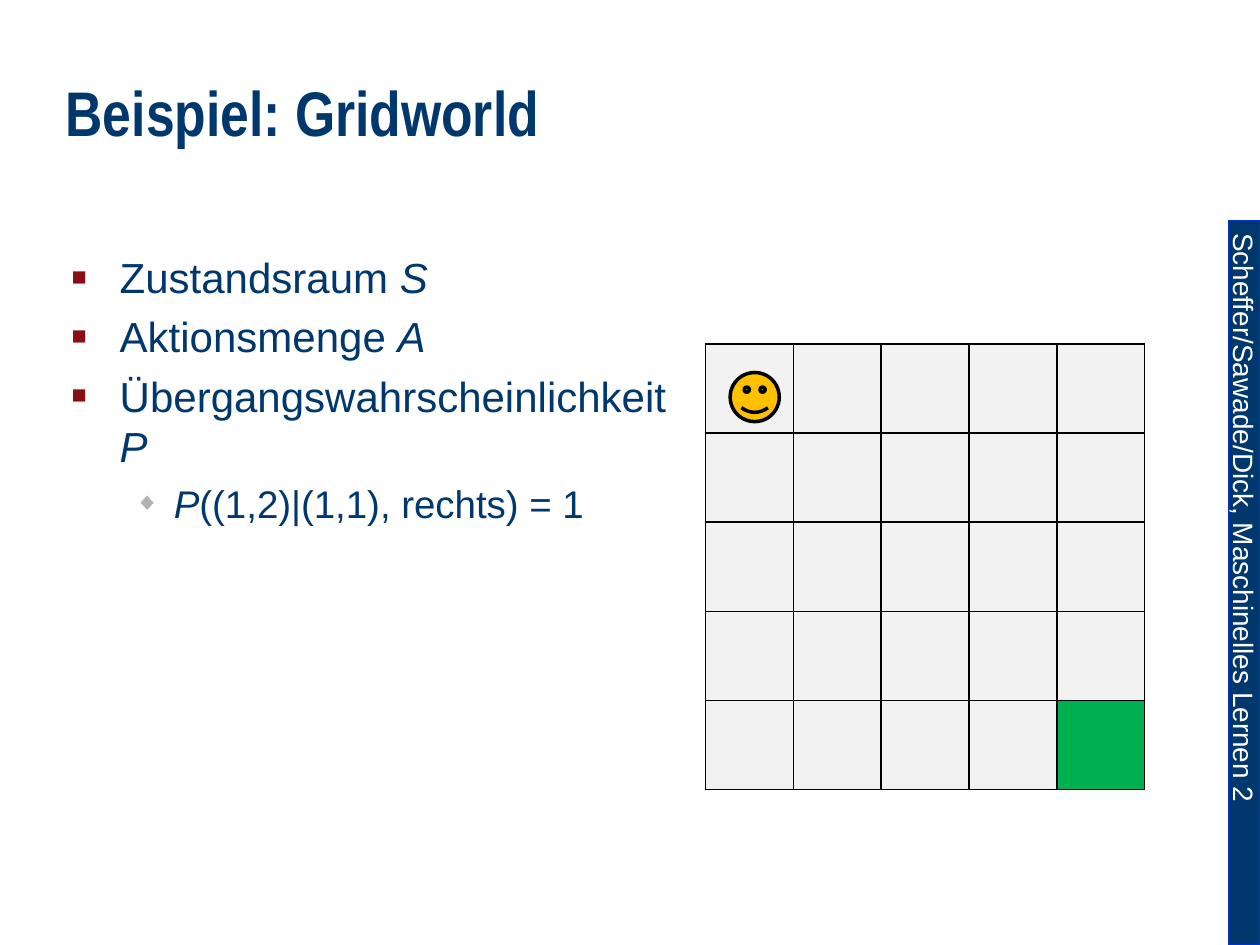
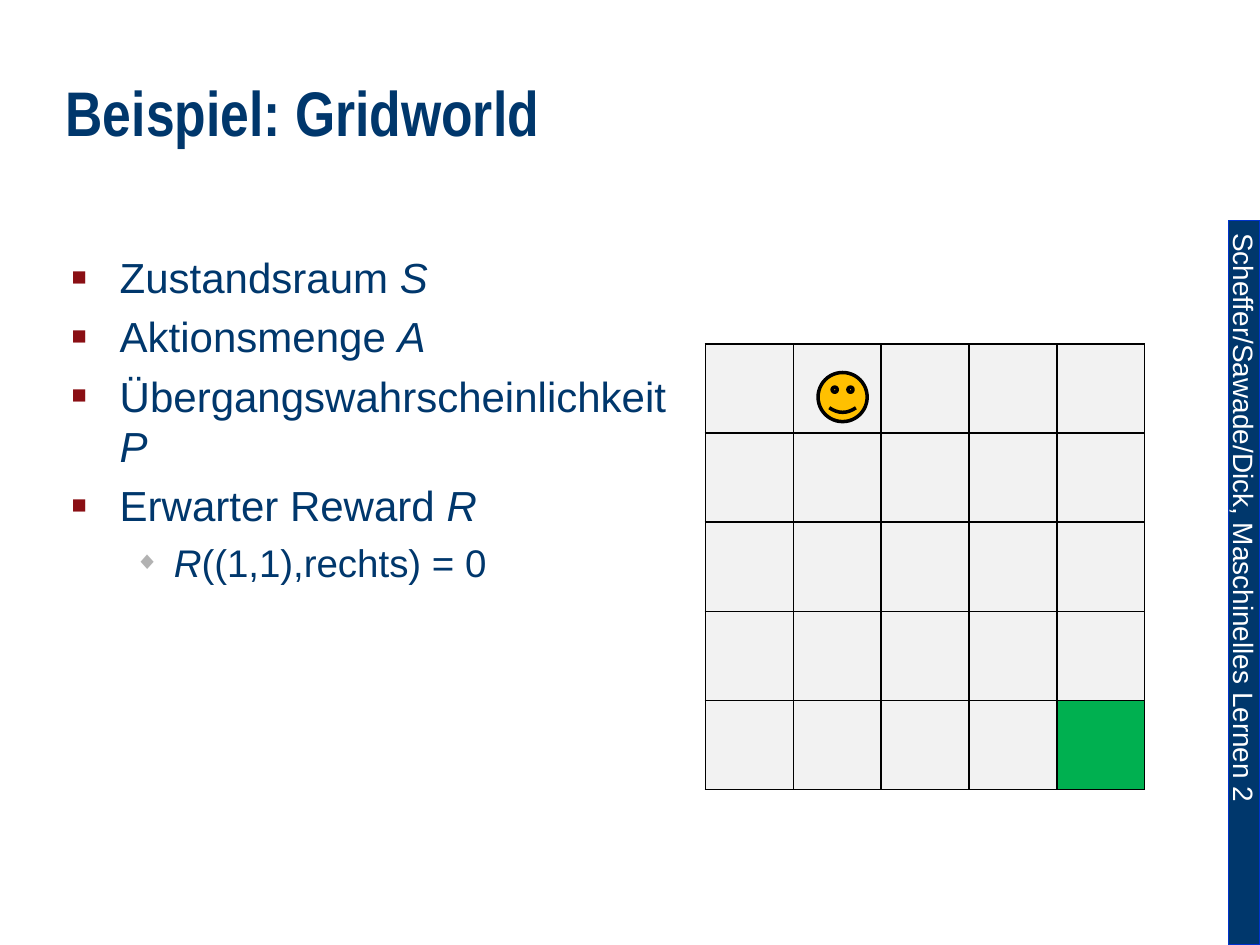
from lxml.etree import SubElement
from pptx import Presentation
from pptx.dml.color import RGBColor
from pptx.enum.shapes import MSO_SHAPE
from pptx.enum.text import MSO_ANCHOR, MSO_AUTO_SIZE, PP_ALIGN
from pptx.oxml.ns import qn
from pptx.util import Cm, Pt

COLOURS = {
    "navy": "00376C", "band_edge": "0033CC", "white": "FFFFFF", "black": "000000",
    "red": "8A0F14", "silver": "B2B2B2", "cell": "F2F2F2", "goal": "00B050",
    "agent": "FFC000",
}
TITLE = "Beispiel: Gridworld"
BAND_TEXT = "Scheffer/Sawade/Dick, Maschinelles Lernen 2"
TITLE_BOX = (1.07, 0.84, 21.59, 3.18)
LIST_BOX = (1.19, 4.95, 12.7, 13.08)
BAND_BOX = (24.77, 4.45, 0.63, 14.6)
GRID_BOX = (14.22, 6.93, 8.86, 8.99)
GRID_SIZE = 5
LEVELS = [
    {"size": 24, "margin": 0.97, "hang": 0.97, "bullet": "■", "colour": "red", "scale": 60},
    {"size": 22, "margin": 2.06, "hang": 0.79, "bullet": "◆", "colour": "silver", "scale": 65},
]
COMMON_ITEMS = [
    (0, [("Zustandsraum ", False), ("S", True)]),
    (0, [("Aktionsmenge ", False), ("A", True)]),
    (0, [("Übergangswahrscheinlichkeit ", False), ("P", True)]),
]
PAGES = [
    {"agent_column": 0, "items": [
        (1, [("P", True), ("((1,2)|(1,1), rechts) = 1", False)]),
    ]},
    {"agent_column": 1, "items": [
        (0, [("Erwarter Reward ", False), ("R", True)]),
        (1, [("R", True), ("((1,1),rechts) = 0", False)]),
    ]},
]


def colour(name):
    """Return the named palette colour."""
    return RGBColor.from_string(COLOURS[name])


def add_text(para, text, size=24, font="Arial", fill="navy", bold=False, italic=False):
    """Append one formatted span to a paragraph."""
    span = para.add_run()
    span.text = text
    span.font.size = Pt(size)
    span.font.name = font
    span.font.bold = bold
    span.font.italic = italic
    span.font.color.rgb = colour(fill)


def place(shape, box):
    """Move a shape to a box given in centimetres."""
    shape.left, shape.top, shape.width, shape.height = map(Cm, box)


def add_figure(page, kind, box, fill, line, width):
    """Add a filled, outlined preset shape without shadow."""
    shape = page.shapes.add_shape(kind, *map(Cm, box))
    shape.shadow.inherit = False
    shape.fill.solid()
    shape.fill.fore_color.rgb = colour(fill)
    shape.line.color.rgb = colour(line)
    shape.line.width = Pt(width)
    return shape


def add_band(page, box):
    """Draw the vertical course band at the right edge."""
    frame = add_figure(page, MSO_SHAPE.RECTANGLE, box, "navy", "band_edge", 0.75).text_frame
    frame.word_wrap = False
    frame.vertical_anchor = MSO_ANCHOR.MIDDLE
    frame._txBody.bodyPr.set("vert", "eaVert")
    para = frame.paragraphs[0]
    para.alignment = PP_ALIGN.LEFT
    add_text(para, BAND_TEXT, size=16, fill="white")


def fill_title(title, box):
    """Place and format the title placeholder."""
    place(title, box)
    frame = title.text_frame
    frame.auto_size = MSO_AUTO_SIZE.NONE
    frame.vertical_anchor = MSO_ANCHOR.MIDDLE
    para = frame.paragraphs[0]
    para.alignment = PP_ALIGN.LEFT
    para.line_spacing = 0.7
    add_text(para, TITLE, size=36, font="Arial Narrow", bold=True)


def set_bullet(para, style):
    """Give a paragraph its hanging indent and coloured bullet."""
    props = para._p.get_or_add_pPr()
    props.set("marL", str(Cm(style["margin"])))
    props.set("indent", str(-Cm(style["hang"])))
    bullet_colour = SubElement(props, qn("a:buClr"))
    SubElement(bullet_colour, qn("a:srgbClr"), val=COLOURS[style["colour"]])
    SubElement(props, qn("a:buSzPct"), val=str(style["scale"] * 1000))
    SubElement(props, qn("a:buFont"), typeface="Arial")
    SubElement(props, qn("a:buChar"), char=style["bullet"])


def fill_list(body, box, items):
    """Fill the body placeholder with a two-level bullet list."""
    place(body, box)
    frame = body.text_frame
    frame.auto_size = MSO_AUTO_SIZE.NONE
    for index, (level, spans) in enumerate(items):
        para = frame.add_paragraph() if index else frame.paragraphs[0]
        style = LEVELS[level]
        para.level = level
        para.space_before = Pt(5)
        set_bullet(para, style)
        for text, italic in spans:
            add_text(para, text, size=style["size"], italic=italic)


def format_cell(cell, fill):
    """Fill a grid cell and draw its four borders."""
    props = cell._tc.get_or_add_tcPr()
    for side in ("lnL", "lnR", "lnT", "lnB"):
        border = SubElement(props, qn(f"a:{side}"), w=str(Pt(1)))
        line_fill = SubElement(border, qn("a:solidFill"))
        SubElement(line_fill, qn("a:srgbClr"), val=COLOURS["black"])
    cell.fill.solid()
    cell.fill.fore_color.rgb = colour(fill)


def add_gridworld(page, box, agent_column):
    """Draw the grid with its goal cell and the agent in the top row."""
    left, top, width, height = box
    table = page.shapes.add_table(GRID_SIZE, GRID_SIZE, *map(Cm, box)).table
    table.first_row = table.horz_banding = False
    for column in table.columns:
        column.width = Cm(width / GRID_SIZE)
    for row in table.rows:
        row.height = Cm(height / GRID_SIZE)
    for cell in table.iter_cells():
        format_cell(cell, "cell")
    goal = table.cell(GRID_SIZE - 1, GRID_SIZE - 1)
    goal.fill.fore_color.rgb = colour("goal")
    agent_box = (left + agent_column * width / GRID_SIZE + 0.5, top + 0.58, 0.99, 0.99)
    add_figure(page, MSO_SHAPE.SMILEY_FACE, agent_box, "agent", "black", 2)


def add_page(deck, items, agent_column):
    """Build one gridworld slide."""
    page = deck.slides.add_slide(deck.slide_layouts[1])
    add_band(page, BAND_BOX)
    fill_title(page.shapes.title, TITLE_BOX)
    fill_list(page.placeholders[1], LIST_BOX, COMMON_ITEMS + items)
    add_gridworld(page, GRID_BOX, agent_column)


def main():
    """Build and save the deck."""
    deck = Presentation()
    deck.slide_width, deck.slide_height = Cm(25.4), Cm(19.05)
    for content in PAGES:
        add_page(deck, **content)
    deck.save("out.pptx")


if __name__ == "__main__":
    main()
